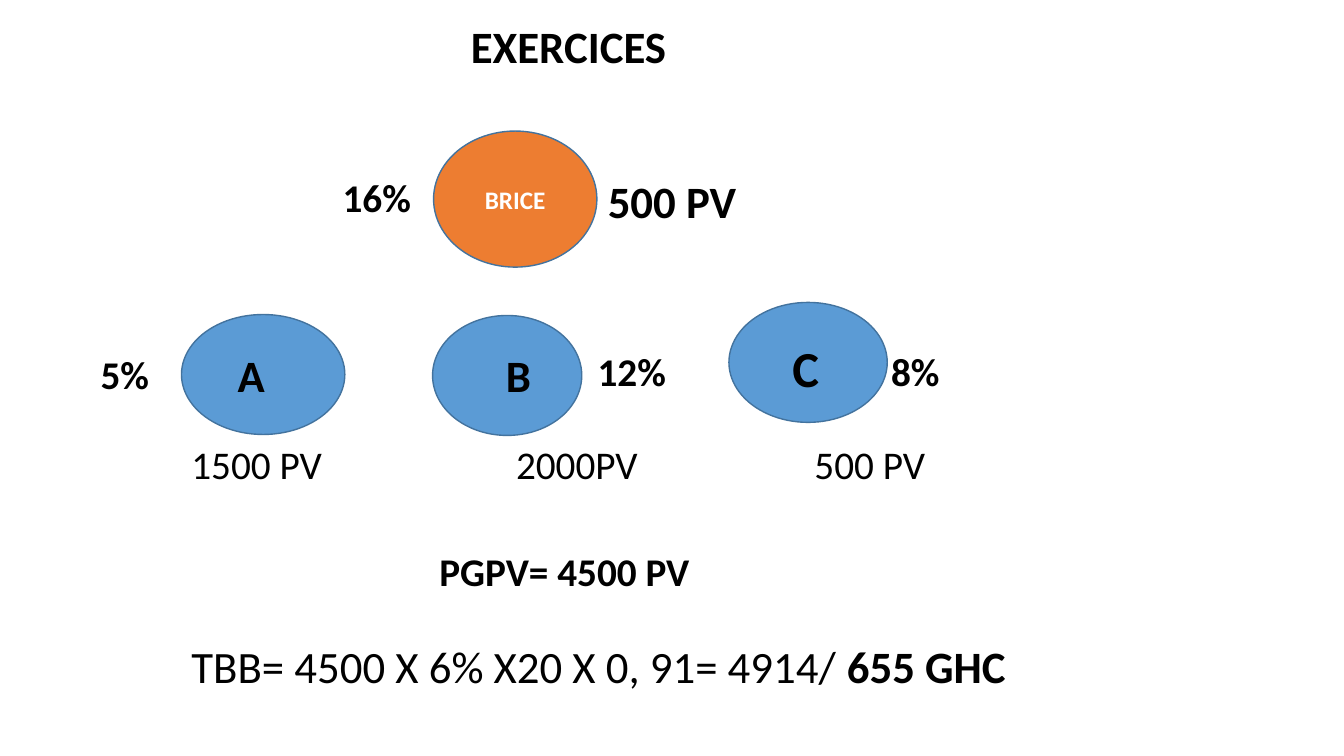
"""Build the EXERCICES slide: a sponsor, three downline members and the bonus sum."""
from dataclasses import dataclass

from pptx import Presentation
from pptx.dml.color import RGBColor
from pptx.enum.shapes import MSO_SHAPE as SHAPE
from pptx.enum.text import MSO_ANCHOR as ANCHOR, MSO_AUTO_SIZE as AUTO, PP_ALIGN as ALIGN
from pptx.util import Emu, Pt

PX = 9144
FONT = "Calibri"
COLORS = {
    "sponsor": "ED7D31",
    "member": "5B9BD5",
    "outline": "43739E",
    "text": "000000",
    "light": "FFFFFF",
}


@dataclass(frozen=True)
class Box:
    left: int
    top: int
    width: int
    height: int

    def emu(self) -> tuple[Emu, ...]:
        """Return the four lengths in EMU."""
        return tuple(Emu(n * PX) for n in (self.left, self.top, self.width, self.height))


@dataclass(frozen=True)
class Label:
    text: str
    box: Box
    size: int = 28
    bold: bool = True
    bold_end: str = ""


@dataclass(frozen=True)
class Circle:
    box: Box
    color: str = "member"
    text: str = ""


CIRCLES = [
    Circle(Box(430, 130, 162, 135), "sponsor", "BRICE"),
    Circle(Box(180, 312, 162, 119)),
    Circle(Box(429, 313, 148, 119)),
    Circle(Box(723, 300, 157, 119)),
]
TITLE = Label("EXERCICES", Box(457, 14, 604, 64), size=32)
LABELS = [
    Label("1500 PV", Box(180, 432, 200, 57), bold=False),
    Label("2000PV", Box(502, 432, 200, 57), bold=False),
    Label("500 PV", Box(798, 432, 200, 57), bold=False),
    Label("A", Box(226, 340, 87, 64), size=32),
    Label("B", Box(492, 340, 87, 64), size=32),
    Label("C", Box(776, 329, 79, 71), size=36),
    Label("PGPV= 4500 PV", Box(426, 538, 329, 57)),
    Label("500 PV", Box(593, 167, 225, 64), size=32),
    Label("16%", Box(330, 167, 100, 57)),
    Label("8%", Box(874, 340, 100, 57)),
    Label("12%", Box(583, 340, 100, 57)),
    Label("5%", Box(90, 343, 100, 57)),
    Label("TBB= 4500 X 6% X20 X 0, 91= 4914/ ", Box(180, 629, 1003, 64),
          size=32, bold=False, bold_end="655 GHC"),
]


def rgb(name: str) -> RGBColor:
    """Look up a named colour."""
    return RGBColor.from_string(COLORS[name])


def add_text(p, text: str, *, size: int, bold: bool = True, color: str = "text") -> None:
    """Add one formatted run to a paragraph."""
    r = p.add_run()
    r.text = text
    r.font.name = FONT
    r.font.size = Pt(size)
    r.font.bold = bold
    r.font.color.rgb = rgb(color)


def fill_label(sp, label: Label) -> None:
    """Write a label at the top left of a text shape."""
    tf = sp.text_frame
    tf.word_wrap = True
    tf.auto_size = AUTO.NONE
    tf.vertical_anchor = ANCHOR.TOP
    p = tf.paragraphs[0]
    p.alignment = ALIGN.LEFT
    add_text(p, label.text, size=label.size, bold=label.bold)
    if label.bold_end:
        add_text(p, label.bold_end, size=label.size)


def add_circle(s, circle: Circle) -> None:
    """Draw one person as an ellipse."""
    sp = s.shapes.add_shape(SHAPE.OVAL, *circle.box.emu())
    sp.shadow.inherit = False
    sp.fill.solid()
    sp.fill.fore_color.rgb = rgb(circle.color)
    sp.line.color.rgb = rgb("outline")
    sp.line.width = Pt(1)
    if circle.text:
        tf = sp.text_frame
        tf.vertical_anchor = ANCHOR.MIDDLE
        p = tf.paragraphs[0]
        p.alignment = ALIGN.CENTER
        add_text(p, circle.text, size=18, color="light")


def main() -> None:
    """Build and save the slide."""
    prs = Presentation()
    prs.slide_width, prs.slide_height = Emu(1333 * PX), Emu(750 * PX)
    s = prs.slides.add_slide(prs.slide_layouts.get_by_name("Title Only"))
    title = s.shapes.title
    title.left, title.top, title.width, title.height = TITLE.box.emu()
    fill_label(title, TITLE)
    for circle in CIRCLES:
        add_circle(s, circle)
    for label in LABELS:
        fill_label(s.shapes.add_textbox(*label.box.emu()), label)
    prs.save("out.pptx")


if __name__ == "__main__":
    main()
